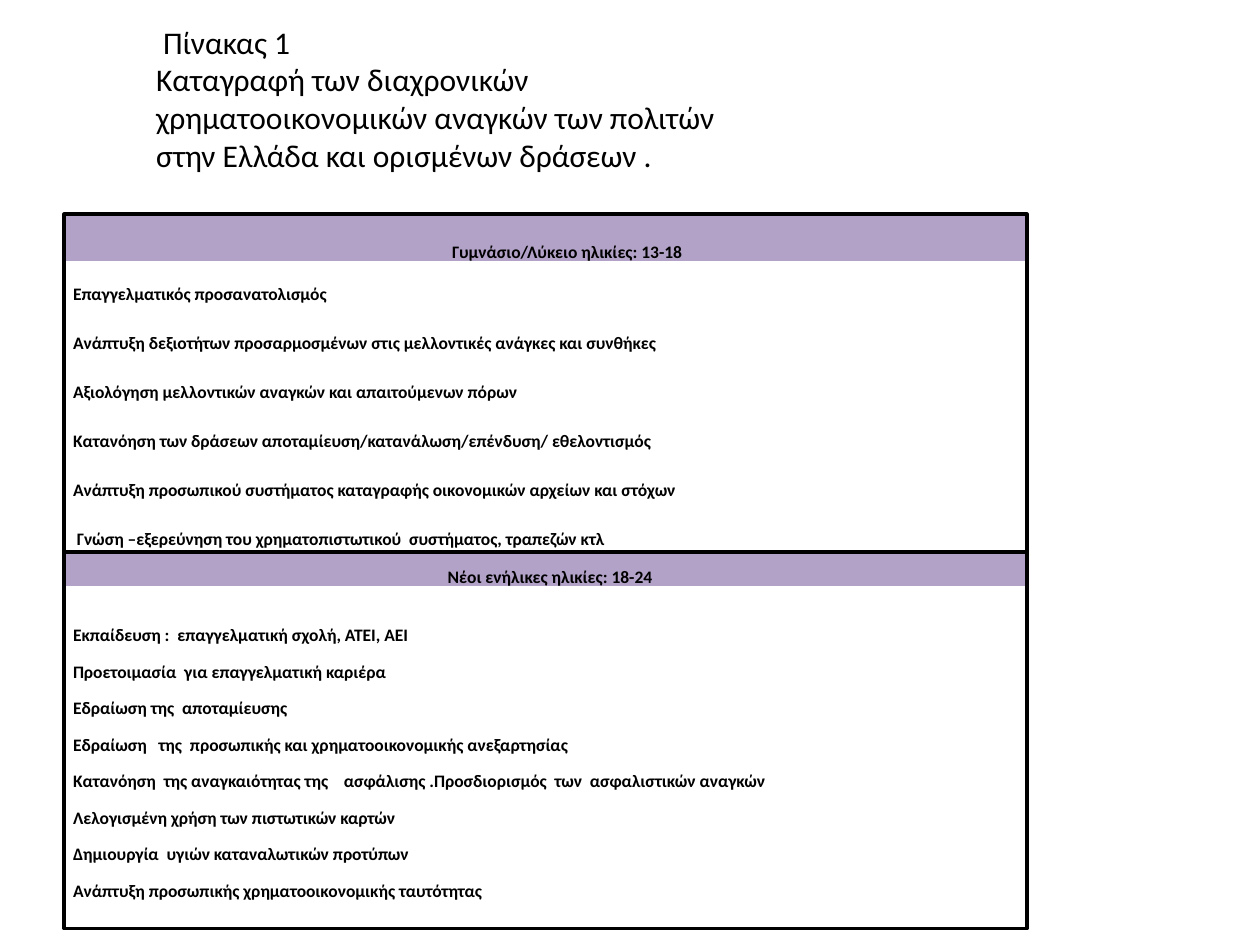
from lxml import etree
from pptx import Presentation
from pptx import util as u
from pptx.dml.color import RGBColor
from pptx.enum import shapes, text
from pptx.oxml import ns

COLORS = {"text": "000000", "frame": "000000", "header": "B3A2C7", "body": "FFFFFF", "rule": "FFFFFF"}
FONT = "Calibri"
LEFT, WIDTH = 0.51, 7.64

TITLE = [
    " Πίνακας 1",
    "Καταγραφή των διαχρονικών χρηματοοικονομικών αναγκών των πολιτών  στην Ελλάδα και ορισμένων δράσεων .",
]

# Each age group: position, frame height, row heights, header inset and wording
AGE_GROUPS = [
    {
        "top": 1.7, "frame": 2.68, "first": 0.39, "second": 0.33, "rest": 0.39, "inset": 0.41,
        "header": "Γυμνάσιο/Λύκειο ηλικίες: 13-18",
        "needs": [
            "Επαγγελματικός προσανατολισμός",
            "Ανάπτυξη δεξιοτήτων προσαρμοσμένων στις μελλοντικές ανάγκες και συνθήκες",
            "Αξιολόγηση μελλοντικών αναγκών και απαιτούμενων πόρων",
            "Κατανόηση των δράσεων αποταμίευση/κατανάλωση/επένδυση/ εθελοντισμός",
            "Ανάπτυξη προσωπικού συστήματος καταγραφής οικονομικών αρχείων και στόχων",
            " Γνώση –εξερεύνηση του χρηματοπιστωτικού  συστήματος, τραπεζών κτλ",
        ],
    },
    {
        "top": 4.38, "frame": 2.99, "first": 0.29, "second": 0.46, "rest": 0.29, "inset": 0.14,
        "header": "Νέοι ενήλικες ηλικίες: 18-24",
        "needs": [
            "Εκπαίδευση :  επαγγελματική σχολή, ΑΤΕΙ, ΑΕΙ",
            "Προετοιμασία  για επαγγελματική καριέρα",
            "Εδραίωση της  αποταμίευσης",
            "Εδραίωση   της  προσωπικής και χρηματοοικονομικής ανεξαρτησίας",
            "Κατανόηση  της αναγκαιότητας της    ασφάλισης .Προσδιορισμός  των  ασφαλιστικών αναγκών",
            "Λελογισμένη χρήση των πιστωτικών καρτών",
            "Δημιουργία  υγιών καταναλωτικών προτύπων",
            "Ανάπτυξη προσωπικής χρηματοοικονομικής ταυτότητας",
        ],
    },
]


def rgb(name):
    return RGBColor.from_string(COLORS[name])


def apply(target, formats):
    for name, value in formats.items():
        setattr(target, name, value)


def write(paragraph, wording, size, bold=False):
    run = paragraph.add_run()
    run.text = wording
    apply(run.font, {"name": FONT, "size": u.Pt(size), "bold": bold})
    run.font.color.rgb = rgb("text")


def add_title(slide):
    title = slide.shapes.add_textbox(u.Inches(1.14), u.Inches(0.13), u.Inches(5), u.Inches(1.31))
    frame = title.text_frame
    apply(frame, {"word_wrap": True, "auto_size": text.MSO_AUTO_SIZE.SHAPE_TO_FIT_TEXT})
    for index, wording in enumerate(TITLE):
        paragraph = frame.add_paragraph() if index else frame.paragraphs[0]
        write(paragraph, wording, 18)


def add_borders(cell, bottom):
    properties = cell._tc.get_or_add_tcPr()
    for side, points in {"lnL": 1, "lnR": 1, "lnT": 1, "lnB": bottom}.items():
        line = etree.SubElement(properties, ns.qn(f"a:{side}"), w=str(u.Pt(points)))
        fill = etree.SubElement(line, ns.qn("a:solidFill"))
        etree.SubElement(fill, ns.qn("a:srgbClr"), val=COLORS["rule"])


def fill_cell(cell, wording, is_header, inset):
    add_borders(cell, 3 if is_header else 1)
    apply(cell, {
        "vertical_anchor": text.MSO_ANCHOR.BOTTOM,
        "margin_left": u.Inches(inset), "margin_right": u.Inches(0.07),
        "margin_top": 0, "margin_bottom": 0,
    })
    cell.fill.solid()
    cell.fill.fore_color.rgb = rgb("header" if is_header else "body")
    paragraph = cell.text_frame.paragraphs[0]
    apply(paragraph, {
        "alignment": text.PP_ALIGN.CENTER if is_header else text.PP_ALIGN.LEFT,
        "line_spacing": 1.07,
    })
    write(paragraph, wording, 10, bold=True)


def add_needs_table(slide, group):
    rows = [group["header"], *group["needs"]]
    heights = [group["first"], group["second"]] + [group["rest"]] * (len(rows) - 2)
    table = slide.shapes.add_table(
        len(rows), 1, u.Inches(LEFT), u.Inches(group["top"]),
        u.Inches(WIDTH), u.Inches(sum(heights))).table
    for index, (wording, height) in enumerate(zip(rows, heights)):
        table.rows[index].height = u.Inches(height)
        is_header = index == 0
        fill_cell(table.cell(index, 0), wording, is_header, group["inset"] if is_header else 0.07)


def add_frame(slide, group):
    frame = slide.shapes.add_shape(
        shapes.MSO_SHAPE.RECTANGLE, u.Inches(LEFT), u.Inches(group["top"]),
        u.Inches(WIDTH), u.Inches(group["frame"]))
    frame.shadow.inherit = False
    frame.fill.background()
    frame.line.color.rgb = rgb("frame")
    frame.line.width = u.Pt(2)


def main():
    deck = Presentation()
    apply(deck, {"slide_width": u.Inches(10), "slide_height": u.Inches(7.5)})
    slide = deck.slides.add_slide(deck.slide_layouts[6])

    # Title
    add_title(slide)

    # One framed table per age group
    for group in AGE_GROUPS:
        add_needs_table(slide, group)
        add_frame(slide, group)

    deck.save("out.pptx")


if __name__ == "__main__":
    main()
